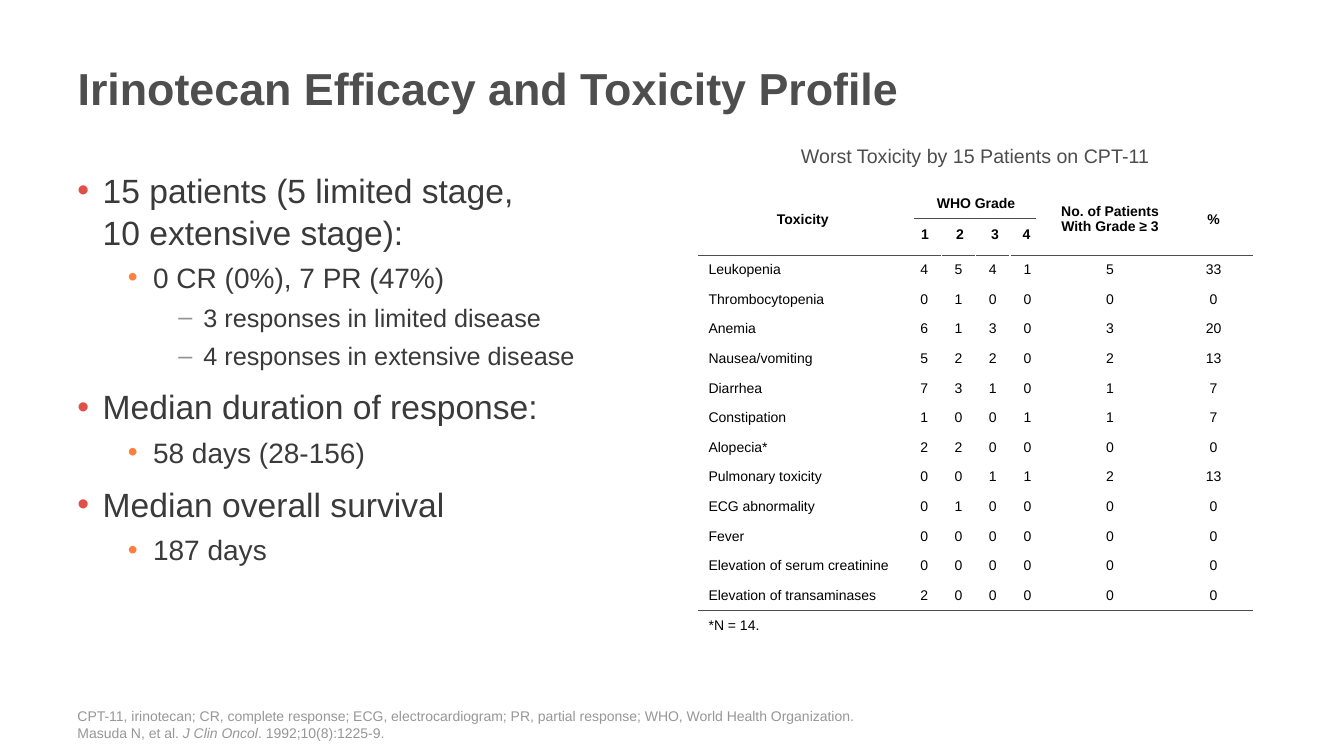
from dataclasses import dataclass

from lxml import etree
from pptx import Presentation
from pptx.dml.color import RGBColor
from pptx.enum.shapes import MSO_CONNECTOR
from pptx.enum.text import MSO_ANCHOR, MSO_AUTO_SIZE, PP_ALIGN
from pptx.oxml.ns import qn
from pptx.util import Pt

STRAIGHT = MSO_CONNECTOR.STRAIGHT
MIDDLE = MSO_ANCHOR.MIDDLE
NO_FIT = MSO_AUTO_SIZE.NONE
LEFT, CENTER = PP_ALIGN.LEFT, PP_ALIGN.CENTER


@dataclass(frozen=True)
class Theme:
    font: str = "Arial"
    title: str = "4D4E4D"
    body: str = "3A3A3A"
    caption: str = "4D4D4D"
    footer: str = "979797"
    table: str = "000000"
    rule: str = "4D4D4D"
    blank_rule: str = "FFFFFF"
    bullets: tuple = (("•", "DF504B"), ("•", "FF7F40"), ("–", "949494"))
    body_sizes: tuple = (24, 20, 18)
    title_size: int = 32
    caption_size: int = 14
    small_size: int = 10


THEME = Theme()


def style(para, size, color, bold=False, align=LEFT):
    para.alignment = align
    para.font.name = THEME.font
    para.font.size = Pt(size)
    para.font.bold = bold
    para.font.color.rgb = RGBColor.from_string(color)


def add_element(parent, tag, **attributes):
    return etree.SubElement(parent, qn(tag), attributes)


deck = Presentation()
deck.slide_width, deck.slide_height = Pt(960), Pt(540)
page = deck.slides.add_slide(deck.slide_layouts[5])

title = page.shapes.title
title.left, title.top, title.width, title.height = Pt(48.24), Pt(15.84), Pt(846), Pt(93.6)
title.text_frame.text = "Irinotecan Efficacy and Toxicity Profile"
title.text_frame.vertical_anchor = MIDDLE
title.text_frame.auto_size = NO_FIT
style(title.text_frame.paragraphs[0], THEME.title_size, THEME.title, bold=True)

footer = page.shapes.add_textbox(Pt(48.24), Pt(500.4), Pt(846), Pt(34.56))
footer.text_frame.word_wrap = True
footer.text_frame.vertical_anchor = MIDDLE
para = footer.text_frame.paragraphs[0]
para.text = (
    "CPT-11, irinotecan; CR, complete response; ECG, electrocardiogram; "
    "PR, partial response; WHO, World Health Organization.\vMasuda N, et al. "
)
journal = para.add_run()
journal.text = "J Clin Oncol"
journal.font.italic = True
para.add_run().text = ". 1992;10(8):1225-9."
style(para, THEME.small_size, THEME.footer)

FINDINGS = [
    (0, "15 patients (5 limited stage,\v10 extensive stage):"),
    (1, "0 CR (0%), 7 PR (47%)"),
    (2, "3 responses in limited disease"),
    (2, "4 responses in extensive disease"),
    (0, "Median duration of response:"),
    (1, "58 days (28-156)"),
    (0, "Median overall survival"),
    (1, "187 days"),
]
findings = page.shapes.add_textbox(Pt(48.24), Pt(116.64), Pt(395.28), Pt(371.52))
findings.text_frame.word_wrap = True
for index, (level, text) in enumerate(FINDINGS):
    para = findings.text_frame.add_paragraph() if index else findings.text_frame.paragraphs[0]
    para.text = text
    para.level = level
    para.line_spacing = 1.04
    if index:
        para.space_before = Pt(5 if level else 10)
    symbol, color = THEME.bullets[level]
    properties = para._p.get_or_add_pPr()
    properties.set("marL", str(Pt(18 + 36 * level)))
    properties.set("indent", str(Pt(-18)))
    add_element(add_element(properties, "a:buClr"), "a:srgbClr", val=color)
    add_element(properties, "a:buFont", typeface=THEME.font)
    add_element(properties, "a:buChar", char=symbol)
    style(para, THEME.body_sizes[level], THEME.body)

HEADER = ["Toxicity", "WHO Grade\n\t1\t2\t3\t4", "", "", "", "No. of Patients\nWith Grade ≥ 3", "%"]
TOXICITIES = [
    ("Leukopenia", 4, 5, 4, 1, 5, 33),
    ("Thrombocytopenia", 0, 1, 0, 0, 0, 0),
    ("Anemia", 6, 1, 3, 0, 3, 20),
    ("Nausea/vomiting", 5, 2, 2, 0, 2, 13),
    ("Diarrhea", 7, 3, 1, 0, 1, 7),
    ("Constipation", 1, 0, 0, 1, 1, 7),
    ("Alopecia*", 2, 2, 0, 0, 0, 0),
    ("Pulmonary toxicity", 0, 0, 1, 1, 2, 13),
    ("ECG abnormality", 0, 1, 0, 0, 0, 0),
    ("Fever", 0, 0, 0, 0, 0, 0),
    ("Elevation of serum creatinine", 0, 0, 0, 0, 0, 0),
    ("Elevation of transaminases", 2, 0, 0, 0, 0, 0),
]
ROWS = [HEADER, *TOXICITIES, ("*N = 14.", "", "", "", "", "", "")]
COLUMN_WIDTHS = [149, 24.5, 24.5, 24.5, 25, 93, 55]
GRADE_TABS = [5.5, 30.5, 55.5, 78]
RULED_BELOW = {0, len(TOXICITIES)}

frame = page.shapes.add_table(
    len(ROWS), len(COLUMN_WIDTHS), Pt(498.96), Pt(131.04), Pt(395.5), Pt(326.15))
table = frame.table
table.first_row = False
table.horz_banding = False
for column, width in zip(table.columns, COLUMN_WIDTHS):
    column.width = Pt(width)
for row_index, values in enumerate(ROWS):
    table.rows[row_index].height = Pt(21.15 if row_index else 51.2)
    for column_index, value in enumerate(values):
        cell = table.cell(row_index, column_index)
        cell.text = str(value)
        cell.vertical_anchor = MIDDLE
        cell.margin_top = cell.margin_bottom = 0
        edges = {
            "a:lnL": False,
            "a:lnR": False,
            "a:lnT": row_index - 1 in RULED_BELOW,
            "a:lnB": row_index in RULED_BELOW,
        }
        for edge, ruled in edges.items():
            line = add_element(cell._tc.get_or_add_tcPr(), edge, w=str(Pt(1)))
            color = THEME.rule if ruled else THEME.blank_rule
            add_element(add_element(line, "a:solidFill"), "a:srgbClr", val=color)
        cell.fill.background()
        for para in cell.text_frame.paragraphs:
            align = CENTER if column_index or not row_index else LEFT
            if "\t" in para.text:
                align = LEFT
                para.space_before = Pt(11.5)
                tabs = add_element(para._p.get_or_add_pPr(), "a:tabLst")
                for position in GRADE_TABS:
                    add_element(tabs, "a:tab", pos=str(Pt(position)), algn="ctr")
            style(para, THEME.small_size, THEME.table, bold=row_index == 0, align=align)
            if not para.text:
                add_element(para._p, "a:endParaRPr", sz=str(THEME.small_size * 100))
table.cell(0, 1).merge(table.cell(0, 4))

grade_rule = page.shapes.add_connector(STRAIGHT, Pt(653.04), Pt(156.24), Pt(740.16), Pt(156.24))
grade_rule.line.color.rgb = RGBColor.from_string(THEME.rule)
grade_rule.line.width = Pt(1)
add_element(grade_rule._element.spPr, "a:effectLst")

caption = page.shapes.add_textbox(Pt(498.96), Pt(99.36), Pt(395.28), Pt(24.48))
caption.text_frame.word_wrap = True
caption.text_frame.text = "Worst Toxicity by 15 Patients on CPT-11"
style(caption.text_frame.paragraphs[0], THEME.caption_size, THEME.caption, align=CENTER)

deck.save("out.pptx")
